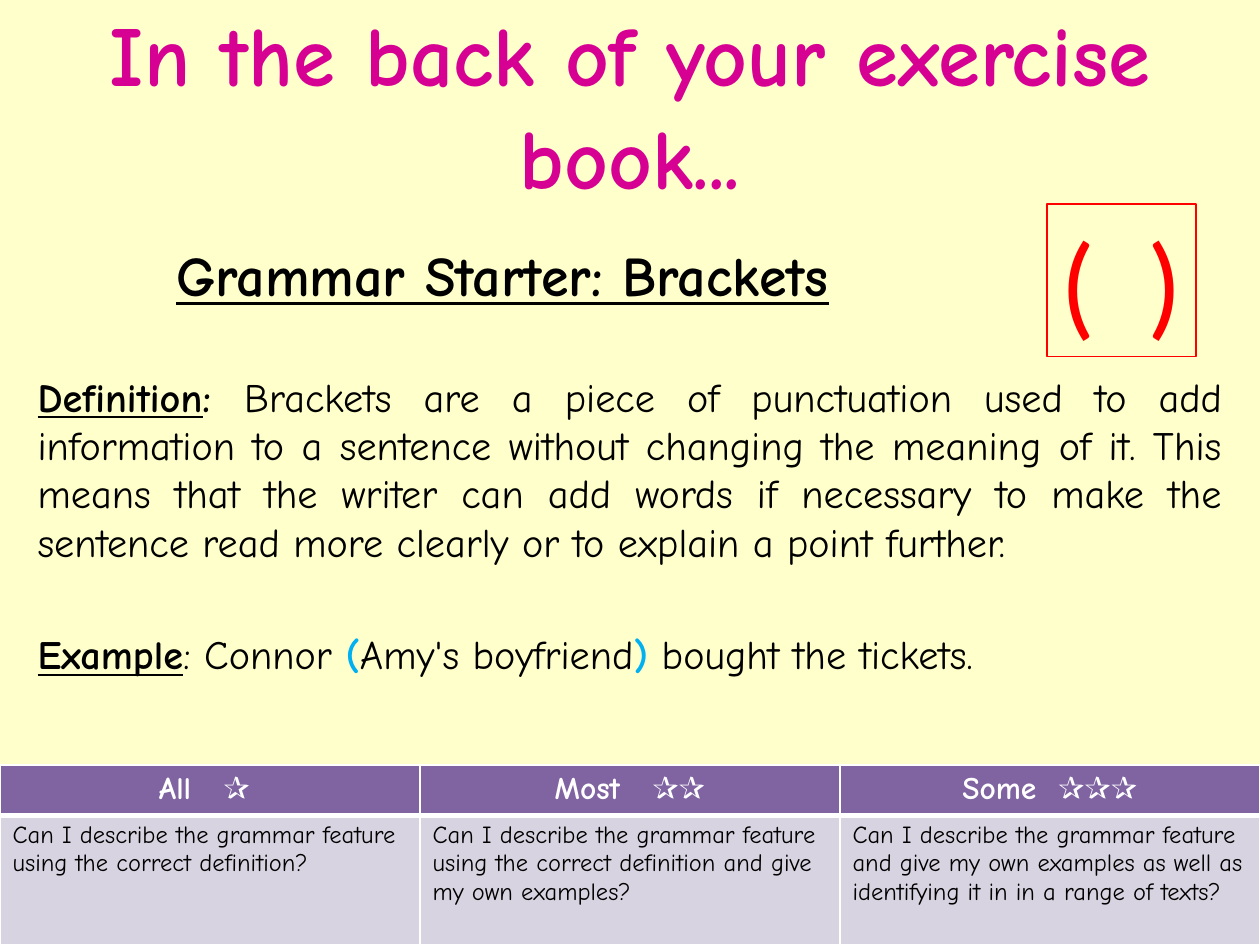
import pptx
import pptx.util
import pptx.dml.color
import pptx.enum.shapes
import pptx.enum.text
import lxml.etree

Inches, Pt = pptx.util.Inches, pptx.util.Pt
ALIGN = pptx.enum.text.PP_ALIGN
ANCHOR = pptx.enum.text.MSO_ANCHOR

THEME = {
    "font": "Comic Neue", "sign_font": "Calibri",
    "paper": "FFFFCC", "pink": "D60093", "ink": "000000", "red": "FF0000",
    "blue": "00B0F0", "white": "FFFFFF", "head": "8064A2", "cell": "D8D3E0",
    "title": 48.6, "topic": 32, "body": 23, "sign": 66, "level": 18, "goal": 14,
}

# Content: each run is (text, style)
BOLD = {"bold": True}
LINED = {"bold": True, "line": True}
MARK = {"bold": True, "color": "blue"}
TITLE = "In the back of your exercise book..."
TOPIC = "Grammar Starter: Brackets"
BODY = [
    (ALIGN.JUSTIFY, [
        ("Definition", LINED), (": ", BOLD),
        ("Brackets are a piece of punctuation used to add information to a "
         "sentence without changing the meaning of it. This means that the "
         "writer can add words if necessary to make the sentence read more "
         "clearly or to explain a point further.", {})]),
    (ALIGN.JUSTIFY, [
        ("Example", LINED), (": Connor ", {}), ("(", MARK),
        ("Amy's boyfriend", {}), (")", MARK), (" bought the tickets.", {})]),
]
# Level, stars, extra gap in points, goal
LEVELS = [
    ("All", "✰ ", 12, "Can I describe the grammar feature using the correct "
     "definition?"),
    ("Most", "✰✰", 12, "Can I describe the grammar feature using the correct "
     "definition and give my own examples?"),
    ("Some", "✰✰✰", 6, "Can I describe the grammar feature and give my own "
     "examples as well as identifying it in in a range of texts?"),
]


def tint(name):
    return pptx.dml.color.RGBColor.from_string(THEME[name])


def add_run(para, text, size, color="ink", bold=False, line=False,
            font="font", gap=0):
    run = para.add_run()
    run.text = text
    run.font.name = THEME[font]
    run.font.size = Pt(THEME[size])
    run.font.bold = bold
    run.font.underline = line
    run.font.color.rgb = tint(color)
    if gap:  # letter spacing, in hundredths of a point
        run.font._element.set("spc", str(int(gap * 100)))


def add_box(slide, left, top, width, height):
    frame = slide.shapes.add_textbox(
        Inches(left), Inches(top), Inches(width), Inches(height)).text_frame
    frame.word_wrap = True
    return frame


def edge(cell, sides):
    props = cell._tc.get_or_add_tcPr()
    for spot, (side, width) in enumerate(sides.items()):
        props.insert(spot, pptx.oxml.parse_xml(
            '<a:ln%s xmlns:a="http://schemas.openxmlformats.org/drawingml/'
            '2006/main" w="%d"><a:solidFill><a:srgbClr val="%s"/>'
            '</a:solidFill></a:ln%s>' % (side, Pt(width), THEME["white"], side)))


def add_words(slide):
    # Title
    frame = add_box(slide, 0, 0.02, 10, 1.61)
    frame.vertical_anchor = ANCHOR.MIDDLE
    para = frame.paragraphs[0]
    para.alignment = ALIGN.CENTER
    add_run(para, TITLE, "title", "pink", bold=True)

    # Topic, set in from the left, then the body
    frame = add_box(slide, 0.2, 1.86, 9.61, 4.84)
    para = frame.paragraphs[0]
    para.space_before = Pt(6.4)
    para._p.get_or_add_pPr().set("marL", str(Inches(1.1)))
    add_run(para, TOPIC, "topic", **LINED)
    for align, runs in BODY:
        para = frame.add_paragraph()
        para.alignment = align
        para.space_before = Pt(THEME["body"] * 1.6)
        for text, style in runs:
            add_run(para, text, "body", **style)


def add_levels(slide):
    table = slide.shapes.add_table(
        2, len(LEVELS), 0, Inches(6.07), Inches(10), Inches(1.36)).table
    table.rows[0].height = Inches(0.33)
    table.rows[1].height = Inches(1.03)
    for col, (name, stars, gap, goal) in enumerate(LEVELS):
        head, cell = table.cell(0, col), table.cell(1, col)
        for part, fill in ((head, "head"), (cell, "cell")):
            part.fill.solid()
            part.fill.fore_color.rgb = tint(fill)
        edge(head, {"L": 1, "R": 1, "T": 1, "B": 3})
        edge(cell, {"L": 1, "R": 1, "T": 3, "B": 1})
        para = head.text_frame.paragraphs[0]
        para.alignment = ALIGN.CENTER
        for text, space in ((name, 0), (" ", gap), (stars, 0)):
            add_run(para, text, "level", "white", bold=True, gap=space)
        add_run(cell.text_frame.paragraphs[0], goal, "goal")


def add_sign(slide):
    shape = slide.shapes.add_shape(
        pptx.enum.shapes.MSO_SHAPE.RECTANGLE,
        Inches(8.31), Inches(1.62), Inches(1.18), Inches(1.21))
    shape.shadow.inherit = False
    shape.fill.background()
    shape.line.color.rgb = tint("red")
    shape.line.width = Pt(1)
    frame = shape.text_frame
    frame.word_wrap = False
    frame.vertical_anchor = ANCHOR.TOP
    para = frame.paragraphs[0]
    para.alignment = ALIGN.CENTER
    for text, gap in (("(", 0), (" ", 15), (")", 0)):
        add_run(para, text, "sign", "red", font="sign_font", gap=gap)


def main():
    deck = pptx.Presentation()
    deck.slide_width, deck.slide_height = Inches(10), Inches(7.5)
    slide = deck.slides.add_slide(deck.slide_layouts[6])
    slide.background.fill.solid()
    slide.background.fill.fore_color.rgb = tint("paper")
    add_words(slide)
    add_levels(slide)
    add_sign(slide)
    deck.save("out.pptx")


if __name__ == "__main__":
    main()
